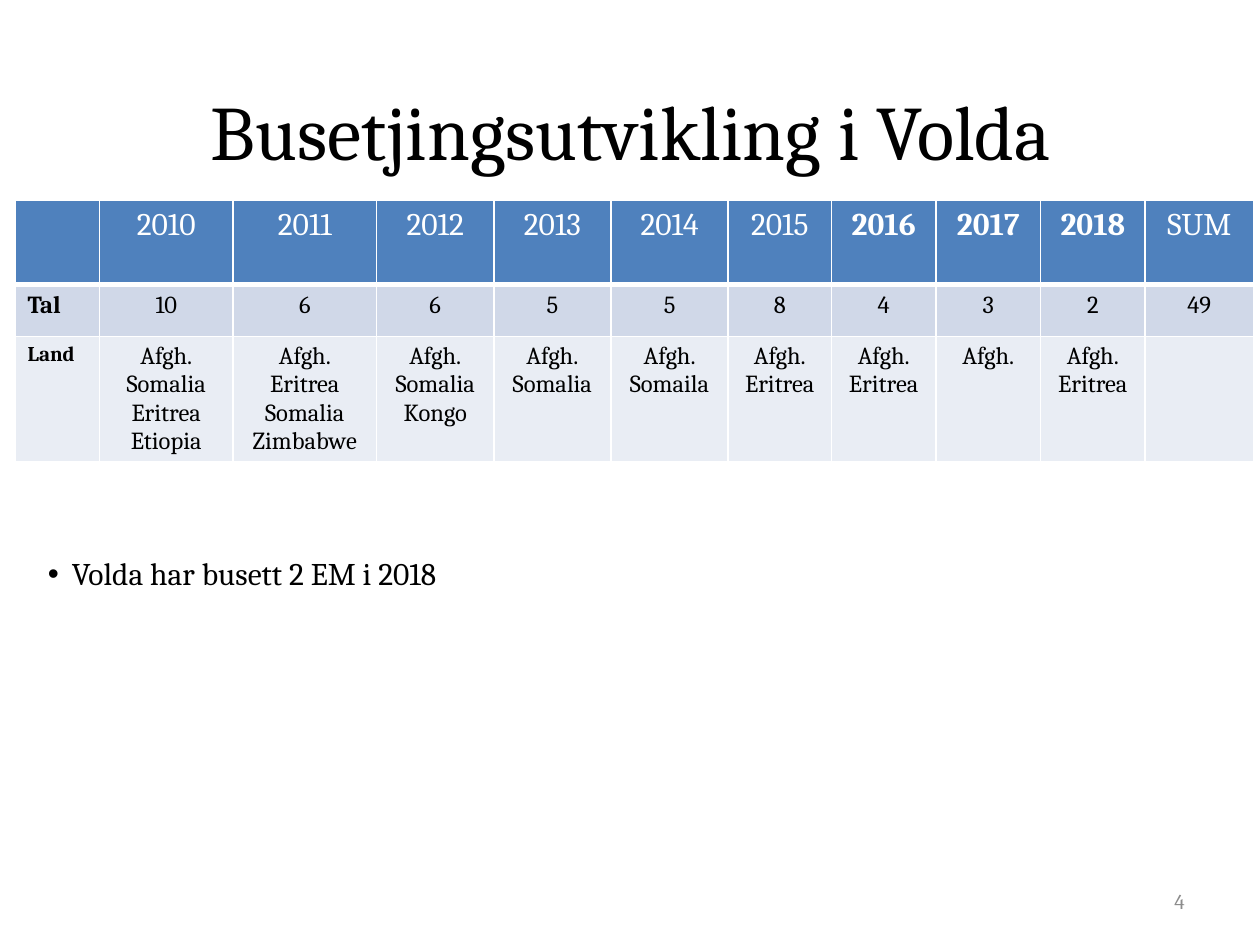
import lxml.etree
import pptx
import pptx.dml.color
import pptx.enum.text
import pptx.oxml.ns
import pptx.util

Inches = pptx.util.Inches
ALIGN = pptx.enum.text.PP_ALIGN
ANCHOR = pptx.enum.text.MSO_ANCHOR

TITLE = "Busetjingsutvikling i Volda"
NOTE = "Volda har busett 2 EM i 2018"
SLIDE_NUMBER = "4"
# Heading, number settled, countries, column width in inches
COLUMNS = [
    ("", "Tal", ["Land"], 0.67),
    ("2010", "10", ["Afgh.", "Somalia", "Eritrea", "Etiopia"], 1.06),
    ("2011", "6", ["Afgh.", "Eritrea", "Somalia", "Zimbabwe"], 1.14),
    ("2012", "6", ["Afgh.", "Somalia", "Kongo"], 0.93),
    ("2013", "5", ["Afgh.", "Somalia"], 0.93),
    ("2014", "5", ["Afgh.", "Somaila"], 0.93),
    ("2015", "8", ["Afgh.", "Eritrea"], 0.82),
    ("2016", "4", ["Afgh.", "Eritrea"], 0.83),
    ("2017", "3", ["Afgh."], 0.83),
    ("2018", "2", ["Afgh.", "Eritrea"], 0.83),
    ("SUM", "49", [], 0.86),
]
BOLD_YEARS = {"2016", "2017", "2018"}
ROW_HEIGHTS = [0.67, 0.41, 0.99]
COLORS = {"text": "000000", "white": "FFFFFF", "number": "8C8C8C"}
ROW_FILLS = ["4F81BD", "D0D8E8", "E9EDF4"]
FONT = "Cambria"


def rgb(value):
    return pptx.dml.color.RGBColor.from_string(value)


def write(frame, lines, size, color=COLORS["text"], bold=False,
          align=ALIGN.CENTER, anchor=ANCHOR.TOP, bullet_indent=None):
    frame.word_wrap = True
    frame.vertical_anchor = anchor
    for index, line in enumerate(lines):
        paragraph = frame.paragraphs[0] if index == 0 else frame.add_paragraph()
        paragraph.alignment = align
        paragraph.space_before = pptx.util.Pt(0)
        if bullet_indent:
            properties = paragraph._p.get_or_add_pPr()
            properties.set("marL", str(bullet_indent))
            properties.set("indent", str(-bullet_indent))
            bullet = lxml.etree.SubElement(properties, pptx.oxml.ns.qn("a:buChar"))
            bullet.set("char", "•")
        run = paragraph.add_run()
        run.text = line
        run.font.name = FONT
        run.font.size = pptx.util.Pt(size)
        run.font.bold = bold
        run.font.color.rgb = rgb(color)


def set_borders(cell, **widths):
    properties = cell._tc.get_or_add_tcPr()
    for side in ("L", "R", "T", "B"):
        line = lxml.etree.SubElement(properties, pptx.oxml.ns.qn(f"a:ln{side}"))
        line.set("w", str(pptx.util.Pt(widths.get(side, 1))))
        fill = lxml.etree.SubElement(line, pptx.oxml.ns.qn("a:solidFill"))
        color = lxml.etree.SubElement(fill, pptx.oxml.ns.qn("a:srgbClr"))
        color.set("val", COLORS["white"])


def place(shape, left, top, width, height):
    shape.left, shape.top = Inches(left), Inches(top)
    shape.width, shape.height = Inches(width), Inches(height)


def add_settlement_table(slide):
    widths = [column[-1] for column in COLUMNS]
    table = slide.shapes.add_table(
        len(ROW_HEIGHTS), len(COLUMNS), Inches(0.12), Inches(1.59),
        Inches(sum(widths)), Inches(sum(ROW_HEIGHTS))).table
    for row, height in zip(table.rows, ROW_HEIGHTS):
        row.height = Inches(height)
    for col, (heading, number, countries, width) in enumerate(COLUMNS):
        table.columns[col].width = Inches(width)
        is_label = col == 0
        align = ALIGN.LEFT if is_label else ALIGN.CENTER
        contents = [
            ([heading] if heading else [], 18, COLORS["white"], heading in BOLD_YEARS),
            ([number], 14, COLORS["text"], is_label),
            (countries, 12 if is_label else 14, COLORS["text"], is_label),
        ]
        borders = [{"B": 3}, {"T": 3}, {}]
        for row, (lines, size, color, bold) in enumerate(contents):
            cell = table.cell(row, col)
            set_borders(cell, **borders[row])
            cell.fill.solid()
            cell.fill.fore_color.rgb = rgb(ROW_FILLS[row])
            write(cell.text_frame, lines, size, color=color, bold=bold, align=align)


def main():
    presentation = pptx.Presentation()
    presentation.slide_width, presentation.slide_height = Inches(10), Inches(7.5)
    slide = presentation.slides.add_slide(presentation.slide_layouts[1])

    title = slide.shapes.title
    place(title, 0.51, 0.52, 9, 1.02)
    write(title.text_frame, [TITLE], 44, anchor=ANCHOR.MIDDLE)

    add_settlement_table(slide)

    note = slide.placeholders[1]
    place(note, 0.28, 4.04, 9.72, 0.71)
    note.text_frame.auto_size = pptx.enum.text.MSO_AUTO_SIZE.NONE
    write(note.text_frame, [NOTE], 18, align=ALIGN.LEFT, anchor=ANCHOR.BOTTOM,
          bullet_indent=Inches(0.19))

    number = slide.shapes.add_textbox(
        Inches(7.17), Inches(6.95), Inches(2.33), Inches(0.4))
    write(number.text_frame, [SLIDE_NUMBER], 12, color=COLORS["number"],
          align=ALIGN.RIGHT, anchor=ANCHOR.MIDDLE)

    presentation.save("out.pptx")


if __name__ == "__main__":
    main()
